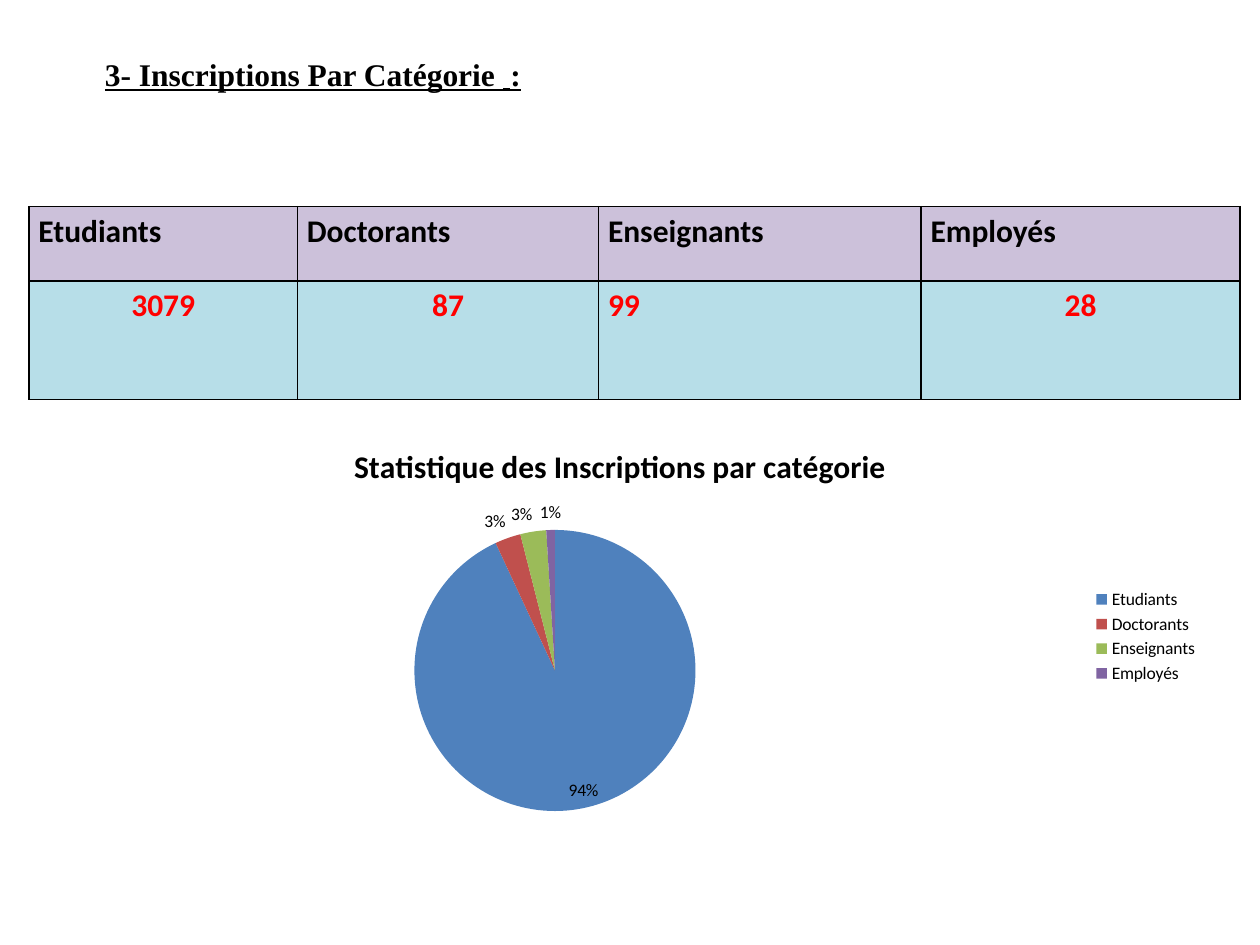
import dataclasses

import lxml.etree
import pptx
import pptx.chart.data
import pptx.dml.color
import pptx.enum.chart
import pptx.enum.text
import pptx.oxml
import pptx.oxml.ns
import pptx.util

Pt = pptx.util.Pt
Align = pptx.enum.text.PP_ALIGN


@dataclasses.dataclass(frozen=True)
class Theme:
    ink: str = "000000"
    count: str = "FF0000"
    header_fill: str = "CCC1DA"
    count_fill: str = "B7DEE8"
    slices: tuple = ("4F81BD", "C0504D", "9BBB59", "8064A2")
    body_font: str = "Calibri"
    heading_font: str = "Times New Roman"
    heading_size: int = 18
    label_size: int = 10


THEME = Theme()
CATEGORIES = ("Etudiants", "Doctorants", "Enseignants", "Employés")
COUNTS = ("3079", "87", "99", "28")
COUNT_ALIGNS = (Align.CENTER, Align.CENTER, Align.LEFT, Align.CENTER)
SHARES = (94, 3, 3, 1)


def rgb(value):
    return pptx.dml.color.RGBColor.from_string(value)


def style_font(font, face, size, color, bold=False):
    font.name = face
    font.size = Pt(size)
    font.bold = bold
    font.color.rgb = rgb(color)


def add_heading(page, left, top, width, height):
    box = page.shapes.title
    box.left, box.top, box.width, box.height = map(Pt, (left, top, width, height))
    frame = box.text_frame
    frame.auto_size = pptx.enum.text.MSO_AUTO_SIZE.NONE
    frame.word_wrap = True
    frame.vertical_anchor = pptx.enum.text.MSO_ANCHOR.TOP
    frame.margin_top = Pt(5.4)
    para = frame.paragraphs[0]
    para.alignment = Align.LEFT
    properties = para._p.get_or_add_pPr()
    properties.set("marL", "0")
    properties.set("indent", str(Pt(35.4)))
    for text, face in (
        ("3- Inscriptions Par Catégorie ", THEME.heading_font),
        (" ", THEME.body_font),
        (":", THEME.heading_font),
    ):
        span = para.add_run()
        span.text = text
        style_font(span.font, face, THEME.heading_size, THEME.ink, True)
        span.font.underline = True


def set_borders(cell):
    properties = cell._tc.get_or_add_tcPr()
    for position, side in enumerate(("lnL", "lnR", "lnT", "lnB")):
        line = pptx.oxml.parse_xml(
            f'<a:{side} {pptx.oxml.ns.nsdecls("a")} w="{Pt(1)}">'
            f'<a:solidFill><a:srgbClr val="{THEME.ink}"/></a:solidFill></a:{side}>'
        )
        properties.insert(position, line)


def fill_cell(cell, text, color, fill, align):
    cell.margin_left = cell.margin_right = Pt(5.4)
    cell.margin_top = cell.margin_bottom = 0
    cell.fill.solid()
    cell.fill.fore_color.rgb = rgb(fill)
    set_borders(cell)
    para = cell.text_frame.paragraphs[0]
    para.alignment = align
    para.line_spacing = 1.15
    span = para.add_run()
    span.text = text
    style_font(span.font, THEME.body_font, THEME.heading_size, color, True)


def add_counts_table(page, left, top, width, height):
    frame = page.shapes.add_table(2, 4, Pt(left), Pt(top), Pt(width), Pt(height))
    table = frame.table
    for column, share in zip(table.columns, (2.13, 2.39, 2.56, 2.53)):
        column.width = Pt(width * share / 9.61)
    header_height = 42.5
    table.rows[0].height = Pt(header_height)
    table.rows[1].height = Pt(height - header_height)
    for index, (category, count, align) in enumerate(zip(CATEGORIES, COUNTS, COUNT_ALIGNS)):
        fill_cell(table.cell(0, index), category, THEME.ink, THEME.header_fill, Align.LEFT)
        fill_cell(table.cell(1, index), count, THEME.count, THEME.count_fill, align)


def set_plot_area(chart, x, y, width, height):
    plot_area = chart._chartSpace.chart.plotArea
    for old in plot_area.findall(pptx.oxml.ns.qn("c:layout")):
        plot_area.remove(old)
    layout = lxml.etree.Element(pptx.oxml.ns.qn("c:layout"))
    manual = lxml.etree.SubElement(layout, pptx.oxml.ns.qn("c:manualLayout"))
    for tag, value in (
        ("layoutTarget", "inner"), ("xMode", "edge"), ("yMode", "edge"),
        ("x", x), ("y", y), ("w", width), ("h", height),
    ):
        lxml.etree.SubElement(manual, pptx.oxml.ns.qn(f"c:{tag}")).set("val", str(value))
    plot_area.insert(0, layout)


def add_share_chart(page, left, top, width, height):
    data = pptx.chart.data.CategoryChartData(number_format='0"%"')
    data.categories = CATEGORIES
    data.add_series("Series 1", SHARES)
    chart = page.shapes.add_chart(
        pptx.enum.chart.XL_CHART_TYPE.PIE, Pt(left), Pt(top), Pt(width), Pt(height), data
    ).chart
    style_font(chart.font, THEME.body_font, THEME.label_size, THEME.ink)
    chart.has_title = True
    span = chart.chart_title.text_frame.paragraphs[0].add_run()
    span.text = "Statistique des Inscriptions par catégorie"
    style_font(span.font, THEME.body_font, THEME.heading_size, THEME.ink, True)
    chart.chart_title.include_in_layout = False
    chart.has_legend = True
    chart.legend.position = pptx.enum.chart.XL_LEGEND_POSITION.RIGHT
    chart.legend.include_in_layout = False
    set_plot_area(chart, 0.07, 0.25, 0.75, 0.66)
    plot = chart.plots[0]
    plot.vary_by_categories = True
    for index, color in enumerate(THEME.slices):
        fill = plot.series[0].points[index].format.fill
        fill.solid()
        fill.fore_color.rgb = rgb(color)
    plot.has_data_labels = True
    labels = plot.data_labels
    labels.show_value = True
    labels.show_percentage = False
    labels.number_format = '0"%"'
    labels.number_format_is_linked = False
    labels.position = pptx.enum.chart.XL_LABEL_POSITION.BEST_FIT
    style_font(labels.font, THEME.body_font, THEME.label_size, THEME.ink)


def main():
    deck = pptx.Presentation()
    deck.slide_width, deck.slide_height = Pt(720), Pt(540)
    page = deck.slides.add_slide(deck.slide_layouts[5])
    add_counts_table(page, 16.6, 118, 692, 110.2)
    add_heading(page, 17.3, 25.9, 702.7, 51)
    add_share_chart(page, 16.6, 242, 675.4, 243.4)
    deck.save("out.pptx")


if __name__ == "__main__":
    main()
